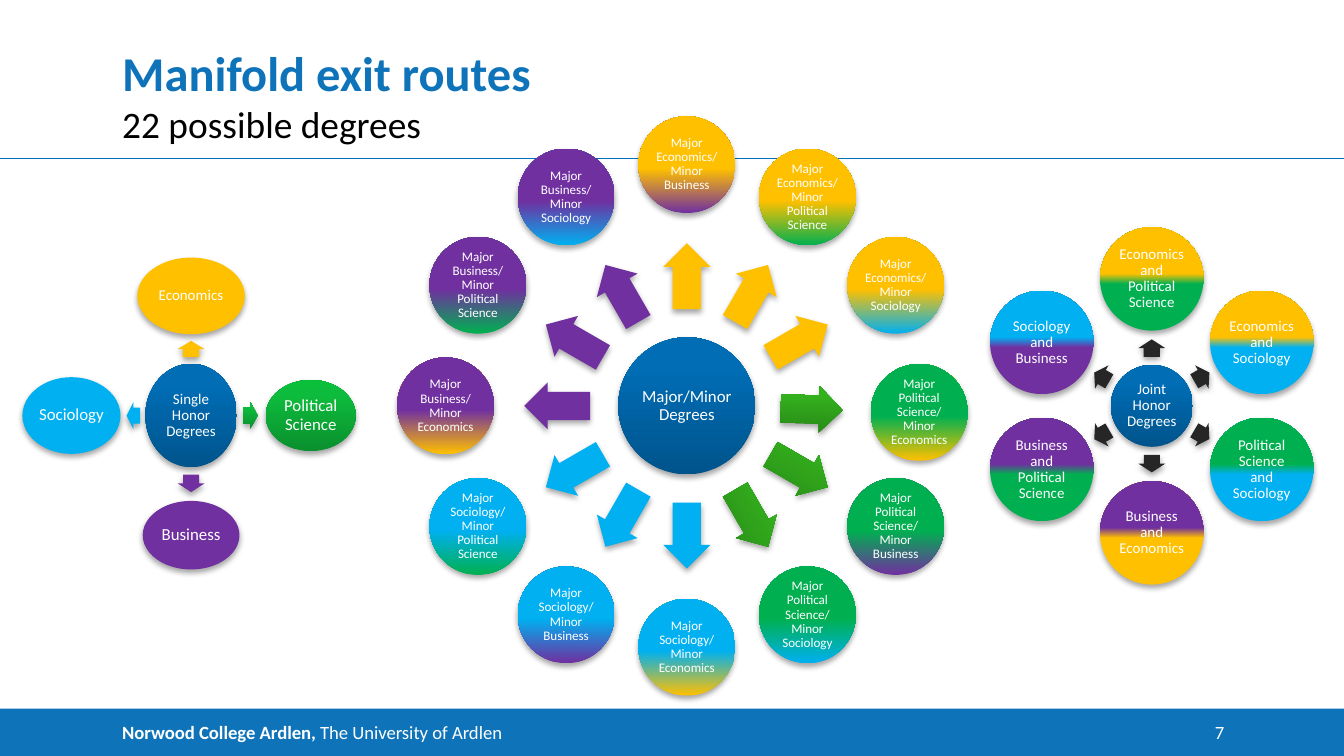
from dataclasses import dataclass
from math import cos, radians, sin

from lxml import etree
from pptx import Presentation
from pptx.dml.color import RGBColor
from pptx.enum.shapes import MSO_CONNECTOR, MSO_SHAPE
from pptx.enum.text import MSO_ANCHOR, PP_ALIGN
from pptx.oxml.ns import qn
from pptx.util import Inches, Pt

OVAL, ARROW, RECTANGLE = MSO_SHAPE.OVAL, MSO_SHAPE.RIGHT_ARROW, MSO_SHAPE.RECTANGLE
STRAIGHT = MSO_CONNECTOR.STRAIGHT
TOP, MIDDLE, BOTTOM = MSO_ANCHOR.TOP, MSO_ANCHOR.MIDDLE, MSO_ANCHOR.BOTTOM
LEFT, CENTER, RIGHT = PP_ALIGN.LEFT, PP_ALIGN.CENTER, PP_ALIGN.RIGHT

# The slide is a square grid of 100 columns by 56.25 rows
WIDTH, HEIGHT = 100, 56.25
FONT = "Calibri"
COLORS = {
    "white": "FFFFFF", "black": "000000", "brand": "0E73B9", "rule": "0070BB",
    "Economics": "FFC000", "Political Science": "00B050",
    "Sociology": "00B0F0", "Business": "7030A0", "dark": "262626",
    "hub low": "00548C", "hub mid": "006DB5", "hub high": "006DB6",
    "leaf low": "288917", "leaf mid": "34B21E", "leaf high": "32B51C",
    "green low": "0A902E", "green mid": "0DBC3C", "green high": "0AC03B",
}

# A paint is a list of (percent from the bottom, colour); one stop is a solid
Paint = list[tuple[int, str]]


def solid(color: str) -> Paint:
    return [(0, color)]


def glossy(name: str) -> Paint:
    return [(0, f"{name} low"), (80, f"{name} mid"), (100, f"{name} high")]


@dataclass
class Spoke:
    label: str
    paint: Paint
    arrow_paint: Paint
    size: tuple[float, float]
    points: int
    reach: float
    arrow_reach: float
    arrow_length: float
    tilt: float = 0


@dataclass
class Wheel:
    label: str
    center: tuple[float, float]
    size: tuple[float, float]
    points: int
    arrow_width: float
    spokes: list[Spoke]


def grid(cells: float) -> int:
    return Inches(cells / 10)


def color(name: str) -> RGBColor:
    return RGBColor.from_string(COLORS[name])


def apply_paint(shape, paint: Paint) -> None:
    shape.line.fill.background()
    if len(paint) == 1:
        shape.fill.solid()
        shape.fill.fore_color.rgb = color(paint[0][1])
        return
    shape.fill.gradient()
    shape.fill.gradient_angle = 90
    stops = shape._element.spPr.find(qn("a:gradFill")).find(qn("a:gsLst"))
    for stop in list(stops):
        stops.remove(stop)
    for percent, name in paint:
        stop = etree.SubElement(stops, qn("a:gs"), pos=str(percent * 1000))
        etree.SubElement(stop, qn("a:srgbClr"), val=COLORS[name])


def add_shadow(shape) -> None:
    shape.shadow.inherit = False
    effects = shape._element.spPr.find(qn("a:effectLst"))
    shadow = etree.SubElement(effects, qn("a:outerShdw"), blurRad=str(Pt(3.1)),
                              dist=str(Pt(1.8)), dir="5400000", rotWithShape="0")
    tone = etree.SubElement(shadow, qn("a:srgbClr"), val=COLORS["black"])
    etree.SubElement(tone, qn("a:alpha"), val="35000")


def write(shape, text: str, points: int, ink: str = "white", align=LEFT,
          anchor=TOP, margin: float = 0, bold: bool = False):
    frame = shape.text_frame
    frame.word_wrap = True
    frame.vertical_anchor = anchor
    frame.margin_left = frame.margin_right = grid(margin)
    frame.margin_top = frame.margin_bottom = grid(margin)
    para = frame.paragraphs[0]
    para.text = text
    para.alignment = align
    para.font.name, para.font.size, para.font.bold = FONT, Pt(points), bold
    para.font.color.rgb = color(ink)
    return para


def add_centered(page, kind, x: float, y: float, size: tuple[float, float], paint: Paint):
    width, height = size
    shape = page.shapes.add_shape(kind, grid(x - width / 2), grid(y - height / 2),
                                  grid(width), grid(height))
    apply_paint(shape, paint)
    add_shadow(shape)
    return shape


def add_bubble(page, x: float, y: float, size: tuple[float, float], paint: Paint,
               label: str, points: int) -> None:
    bubble = add_centered(page, OVAL, x, y, size, paint)
    write(bubble, label, points, align=CENTER, anchor=MIDDLE, margin=0.1).line_spacing = 0.9


def add_wheel(page, wheel: Wheel) -> None:
    x, y = wheel.center
    add_bubble(page, x, y, wheel.size, glossy("hub"), wheel.label, wheel.points)
    for index, spoke in enumerate(wheel.spokes):
        angle = 360 * index / len(wheel.spokes) - 90 + spoke.tilt
        across, down = cos(radians(angle)), sin(radians(angle))
        arrow = add_centered(page, ARROW, x + spoke.arrow_reach * across,
                             y + spoke.arrow_reach * down,
                             (spoke.arrow_length, wheel.arrow_width), spoke.arrow_paint)
        arrow.adjustments[0], arrow.adjustments[1] = 0.6, 0.5
        arrow.rotation = angle % 360
        add_bubble(page, x + spoke.reach * across, y + spoke.reach * down,
                   spoke.size, spoke.paint, spoke.label, spoke.points)


def add_text(page, left: float, top: float, width: float, height: float,
             text: str, points: int, **style) -> None:
    box = page.shapes.add_textbox(grid(left), grid(top), grid(width), grid(height))
    write(box, text, points, **style)


def major_spoke(major: str, minor: str) -> Spoke:
    gap = "" if major == "Economics" else "\n"
    arrow = glossy("leaf") if major == "Political Science" else solid(major)
    spoke = Spoke(f"Major {major}/{gap}Minor {minor}", [(0, minor), (46, major)],
                  arrow, (7.2, 7.2), 7, 17.95, 9.65, 4.9)
    # The first green spoke sits slightly lower and nearer the hub
    if (major, minor) == ("Political Science", "Economics"):
        spoke.reach, spoke.arrow_reach, spoke.arrow_length, spoke.tilt = 17.3, 9.3, 4.6, 1.6
    return spoke


def joint_spoke(first: str, second: str) -> Spoke:
    return Spoke(f"{first} and {second}", [(45, second), (55, first)], solid("dark"),
                 (7.7, 7.7), 8, 9.45, 4.3, 1.3)


# Clockwise from the top
MINORS = {
    "Economics": ["Business", "Political Science", "Sociology"],
    "Political Science": ["Economics", "Business", "Sociology"],
    "Sociology": ["Economics", "Business", "Political Science"],
    "Business": ["Economics", "Political Science", "Sociology"],
}
JOINTS = [("Economics", "Political Science"), ("Economics", "Sociology"),
          ("Political Science", "Sociology"), ("Business", "Economics"),
          ("Business", "Political Science"), ("Sociology", "Business")]
SINGLES = [
    Spoke("Economics", solid("Economics"), solid("Economics"), (8, 5.7), 8, 8.9, 4.95, 1.2),
    Spoke("Political Science", glossy("green"), glossy("green"), (6.7, 5.3), 9, 8.9, 4.4, 1.1),
    Spoke("Business", solid("Business"), solid("Business"), (7.2, 5.1), 9, 8.9, 5.05, 1.3),
    Spoke("Sociology", solid("Sociology"), solid("Sociology"), (7.3, 5.7), 9, 8.9, 4.3, 1),
]
WHEELS = [
    Wheel("Major/Minor Degrees", (51.1, 30.2), (10.2, 10.2), 9, 3.5,
          [major_spoke(major, minor) for major, minors in MINORS.items() for minor in minors]),
    Wheel("Single Honor Degrees", (14.22, 30.92), (6.8, 7.7), 8, 2, SINGLES),
    Wheel("Joint Honor Degrees", (85.7, 30.2), (6.1, 6.1), 8, 2,
          [joint_spoke(first, second) for first, second in JOINTS]),
]


def main() -> None:
    deck = Presentation()
    deck.slide_width, deck.slide_height = grid(WIDTH), grid(HEIGHT)
    page = deck.slides.add_slide(deck.slide_layouts[6])

    # Footer bar and page number
    footer = page.shapes.add_shape(RECTANGLE, 0, grid(52.72), grid(WIDTH), grid(3.53))
    footer.shadow.inherit = False
    apply_paint(footer, solid("brand"))
    para = write(footer, "", 10, anchor=MIDDLE)
    footer.text_frame.margin_left = grid(9.1)
    for text, bold in [("Norwood College Ardlen, ", True), ("The University of Ardlen", False)]:
        span = para.add_run()
        span.text, span.font.bold = text, bold
    add_text(page, 87, 53.65, 4.1, 1.7, "7", 10, align=RIGHT)

    # Rule and headings
    rule = page.shapes.add_connector(STRAIGHT, 0, grid(11.8), grid(WIDTH), grid(11.8))
    rule.line.color.rgb, rule.line.width = color("rule"), Pt(0.75)
    etree.SubElement(rule._element.spPr, qn("a:effectLst"))
    add_text(page, 9.1, 2.95, 82, 4.6, "Manifold exit routes", 26, ink="brand",
             anchor=BOTTOM, bold=True)
    add_text(page, 9.1, 7.5, 82, 2.3, "22 possible degrees", 20, ink="black")

    # Degree wheels
    for wheel in WHEELS:
        add_wheel(page, wheel)
    deck.save("out.pptx")


if __name__ == "__main__":
    main()
